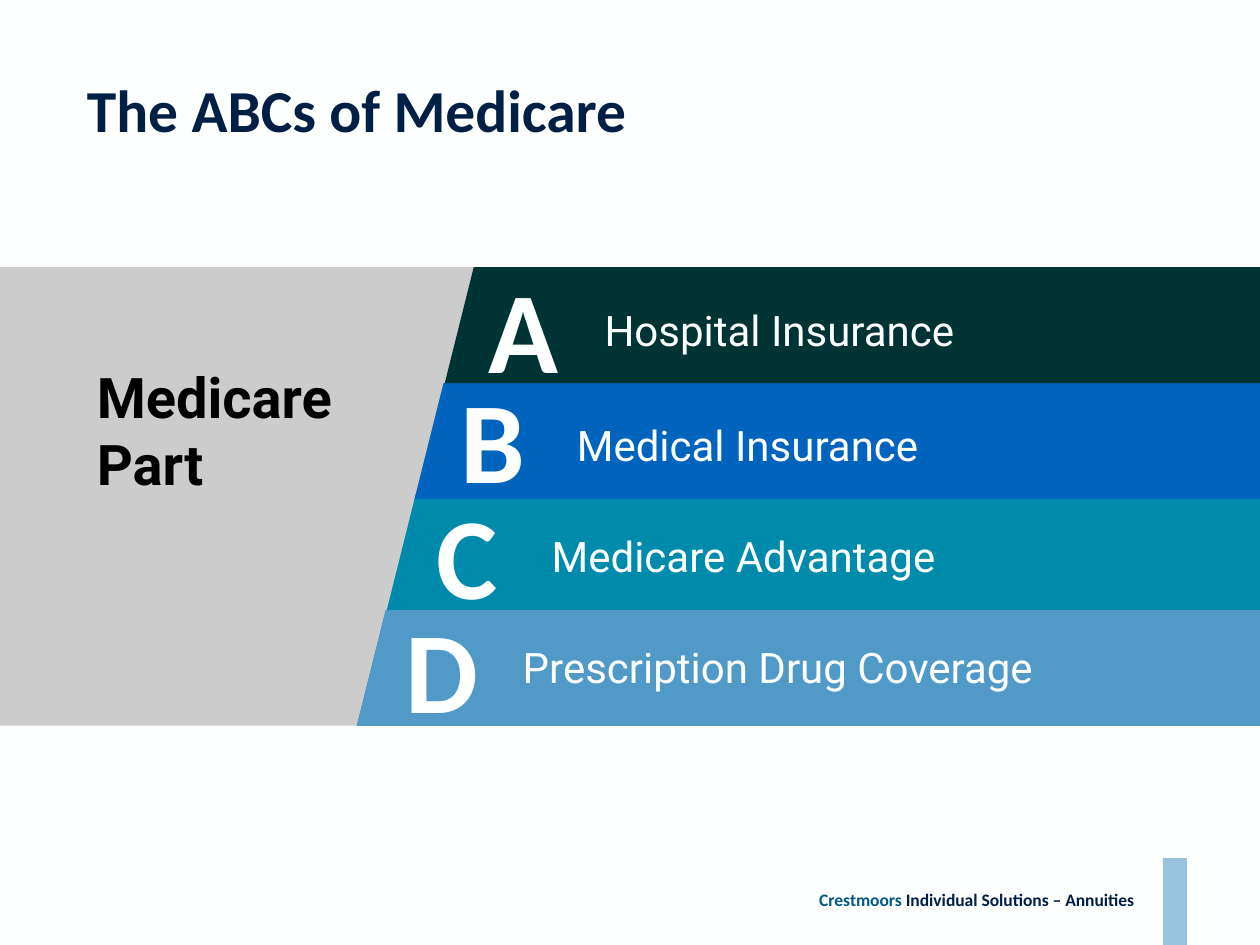
from pptx import Presentation
from pptx.dml.color import RGBColor
from pptx.enum.shapes import MSO_SHAPE
from pptx.enum.text import MSO_ANCHOR, PP_ALIGN
from pptx.util import Inches, Pt

WHITE, NAVY = "FEFFFF", "001F45"


def add_block(preset, left, top, width, height, color):
    """Add a flat filled shape without line or shadow."""
    shape = slide.shapes.add_shape(
        preset, Inches(left), Inches(top), Inches(width), Inches(height))
    shape.shadow.inherit = False
    shape.fill.solid()
    shape.fill.fore_color.rgb = RGBColor.from_string(color)
    shape.line.fill.background()


def write(shape, runs, size, font, bold=False, align=PP_ALIGN.LEFT,
          anchor=MSO_ANCHOR.TOP, inset=True, wrap=True):
    """Fill one paragraph with (text, color) runs."""
    frame = shape.text_frame
    frame.word_wrap = wrap
    frame.vertical_anchor = anchor
    if not inset:
        frame.margin_left = frame.margin_right = 0
        frame.margin_top = frame.margin_bottom = 0
    paragraph = frame.paragraphs[0]
    paragraph.alignment = align
    for text, color in runs:
        run = paragraph.add_run()
        run.text = text
        run.font.name = font
        run.font.size = Pt(size)
        run.font.bold = bold
        run.font.color.rgb = RGBColor.from_string(color)


presentation = Presentation()
presentation.slide_width, presentation.slide_height = Inches(10), Inches(7.5)
slide = presentation.slides.add_slide(presentation.slide_layouts[5])
slide.background.fill.solid()
slide.background.fill.fore_color.rgb = RGBColor.from_string(WHITE)

# Title
title = slide.shapes.title
title.left, title.top = Inches(0.69), Inches(0.58)
title.width, title.height = Inches(9), Inches(0.57)
write(title, [("The ABCs of Medicare", NAVY)], 34, "Calibri", bold=True, inset=False)

# Footer
add_block(MSO_SHAPE.RECTANGLE, 9.23, 6.81, 0.19, 0.69, "98C3DE")
footer = slide.shapes.add_textbox(Inches(6.31), Inches(6.76), Inches(2.69), Inches(0.75))
write(footer, [("Crestmoors", "005883"), (" Individual Solutions – Annuities", NAVY)],
      10, "Calibri", bold=True, align=PP_ALIGN.RIGHT, anchor=MSO_ANCHOR.MIDDLE, inset=False)

# Grey panel with its heading
add_block(MSO_SHAPE.PARALLELOGRAM, -1.13, 2.12, 5.33, 3.64, "CCCCCC")
heading = slide.shapes.add_textbox(Inches(0.67), Inches(2.83), Inches(2.17), Inches(1.18))
write(heading, [("Medicare Part", "000000")], 32, "Roboto", bold=True)

# letter, name, color, band (left, top), letter (left, top), name (left, top, width)
parts = [
    ("A", "Hospital Insurance", "003333", (3.53, 2.12), (3.78, 2.0), (4.7, 2.37, 3.07)),
    ("B", "Medical Insurance", "0063BD", (3.29, 3.04), (3.56, 2.87), (4.48, 3.28, 3.02)),
    ("C", "Medicare Advantage", "008BAC", (3.07, 3.92), (3.37, 3.79), (4.28, 4.16, 3.28)),
    ("D", "Prescription Drug Coverage", "519AC7", (2.83, 4.84), (3.12, 4.7), (4.05, 5.04, 4.28)),
]

# Each band overlaps the one below it, so the lowest is drawn first
for _, _, color, (left, top), _, _ in reversed(parts):
    add_block(MSO_SHAPE.PARALLELOGRAM, left, top, 7.75, 0.92, color)

for letter, name, _, _, (letter_left, letter_top), (left, top, width) in parts:
    name_box = slide.shapes.add_textbox(Inches(left), Inches(top), Inches(width), Inches(0.5))
    write(name_box, [(name, WHITE)], 24, "Roboto", wrap=False)
    letter_box = slide.shapes.add_textbox(
        Inches(letter_left), Inches(letter_top), Inches(1), Inches(1.21))
    write(letter_box, [(letter, WHITE)], 66, "Calibri", bold=True)

presentation.save("out.pptx")
